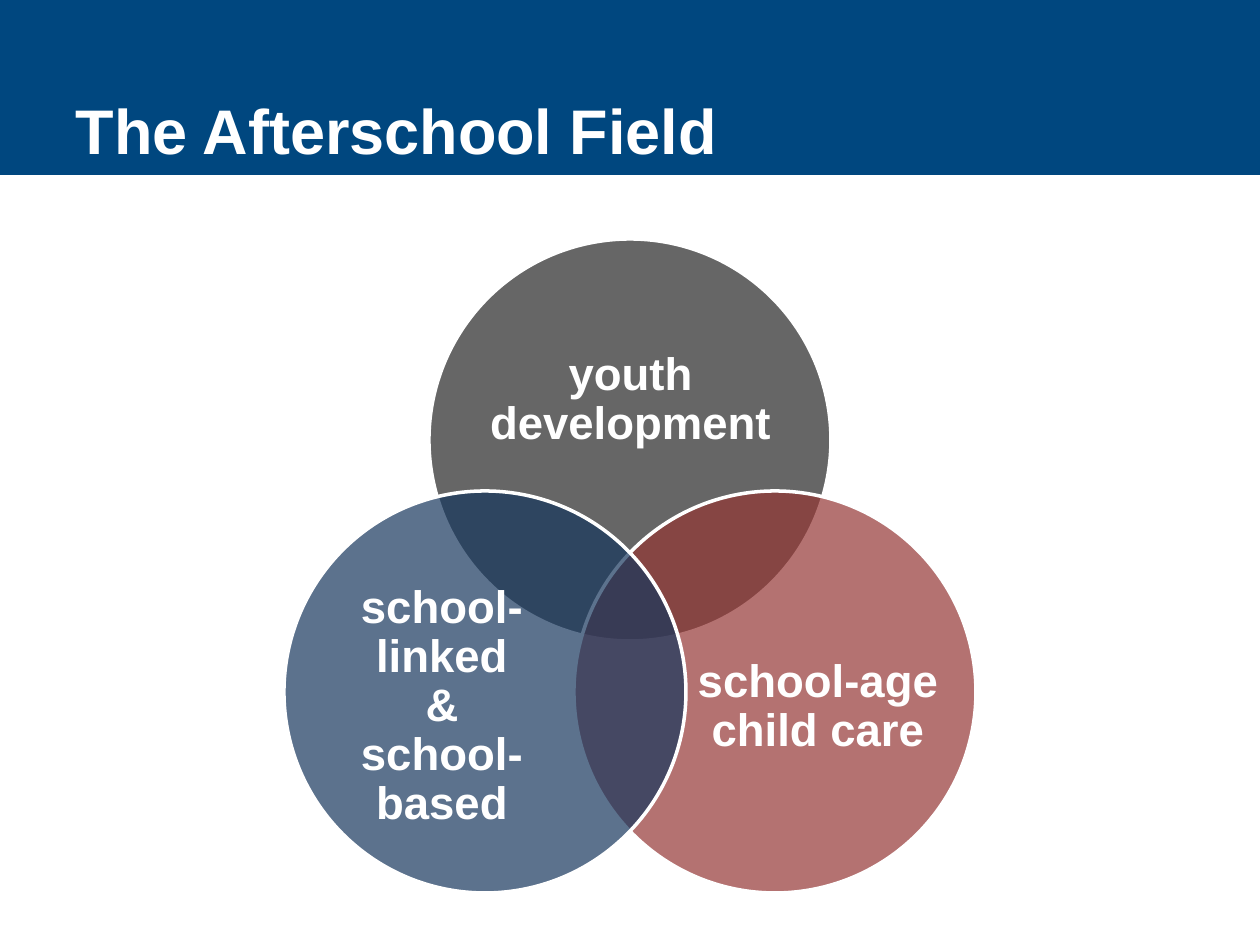
from dataclasses import dataclass

from lxml.etree import SubElement
from pptx import Presentation
from pptx.dml.color import RGBColor
from pptx.enum.shapes import MSO_SHAPE
from pptx.enum.text import MSO_ANCHOR, MSO_AUTO_SIZE, PP_ALIGN
from pptx.oxml.ns import qn
from pptx.util import Pt

EMU_PER_PX = 914400 / 126


@dataclass(frozen=True)
class Theme:
    font: str = "Arial"
    white: str = "FFFFFF"
    band: str = "00477F"
    youth: str = "262626"
    care: str = "953735"
    school: str = "17375E"
    title_size: int = 36
    label_size: int = 26
    outline: int = 2
    opacity: int = 70


@dataclass(frozen=True)
class Box:
    left: int
    top: int
    width: int
    height: int

    def emu(self) -> tuple[int, ...]:
        return tuple(round(px * EMU_PER_PX)
                     for px in (self.left, self.top, self.width, self.height))


@dataclass(frozen=True)
class Field:
    label: str
    colour: str
    centre_x: int
    centre_y: int
    label_box: Box


THEME = Theme()
RADIUS = 201
MIDDLE_X = 630
SPREAD = 145
UPPER_Y, LOWER_Y = 440, 692

FIELDS = (
    Field("youth development", THEME.youth, MIDDLE_X, UPPER_Y,
          Box(483, 310, 295, 181)),
    Field("school-age child care", THEME.care, MIDDLE_X + SPREAD, LOWER_Y,
          Box(697, 596, 242, 222)),
    Field("school-linked\v&\vschool-based", THEME.school, MIDDLE_X - SPREAD, LOWER_Y,
          Box(321, 596, 242, 222)),
)


def apply(target, values: dict) -> None:
    for name, value in values.items():
        setattr(target, name, value)


def place(shape, box: Box) -> None:
    apply(shape, dict(zip(("left", "top", "width", "height"), box.emu())))


def write(frame, text: str, size: int, frame_format: dict, paragraph_format: dict) -> None:
    apply(frame, {"word_wrap": True, "auto_size": MSO_AUTO_SIZE.NONE, **frame_format})
    paragraph = frame.paragraphs[0]
    paragraph.text = text
    apply(paragraph, paragraph_format)
    for run in paragraph.runs:
        apply(run.font, {"name": THEME.font, "size": Pt(size), "bold": True})
        run.font.color.rgb = RGBColor.from_string(THEME.white)


def draw_shape(slide, kind: MSO_SHAPE, box: Box, colour: str):
    shape = slide.shapes.add_shape(kind, *box.emu())
    shape.shadow.inherit = False
    shape.fill.solid()
    shape.fill.fore_color.rgb = RGBColor.from_string(colour)
    shape.line.fill.background()
    return shape


def draw_heading(slide, text: str) -> None:
    heading = slide.shapes.title
    band = draw_shape(slide, MSO_SHAPE.RECTANGLE, Box(0, 0, 1260, 175), THEME.band)
    heading._element.addprevious(band._element)
    place(heading, Box(63, 0, 1134, 173))
    write(heading.text_frame, text, THEME.title_size,
          {"vertical_anchor": MSO_ANCHOR.BOTTOM}, {"alignment": PP_ALIGN.LEFT})


def draw_field(slide, field: Field) -> None:
    bounds = Box(field.centre_x - RADIUS, field.centre_y - RADIUS, 2 * RADIUS, 2 * RADIUS)
    circle = draw_shape(slide, MSO_SHAPE.OVAL, bounds, field.colour)
    circle.line.color.rgb = RGBColor.from_string(THEME.white)
    circle.line.width = Pt(THEME.outline)
    fill_colour = circle._element.spPr.find(qn("a:solidFill"))[0]
    SubElement(fill_colour, qn("a:alpha"), val=str(THEME.opacity * 1000))

    label = slide.shapes.add_textbox(*field.label_box.emu())
    margins = dict.fromkeys(
        ("margin_left", "margin_top", "margin_right", "margin_bottom"), 0)
    write(label.text_frame, field.label, THEME.label_size,
          {"vertical_anchor": MSO_ANCHOR.MIDDLE, **margins},
          {"alignment": PP_ALIGN.CENTER, "line_spacing": 0.9})


def main() -> None:
    presentation = Presentation()
    _, _, width, height = Box(0, 0, 1260, 945).emu()
    apply(presentation, {"slide_width": width, "slide_height": height})
    slide = presentation.slides.add_slide(presentation.slide_layouts[5])
    draw_heading(slide, "The Afterschool Field")
    for field in FIELDS:
        draw_field(slide, field)
    presentation.save("out.pptx")


if __name__ == "__main__":
    main()
